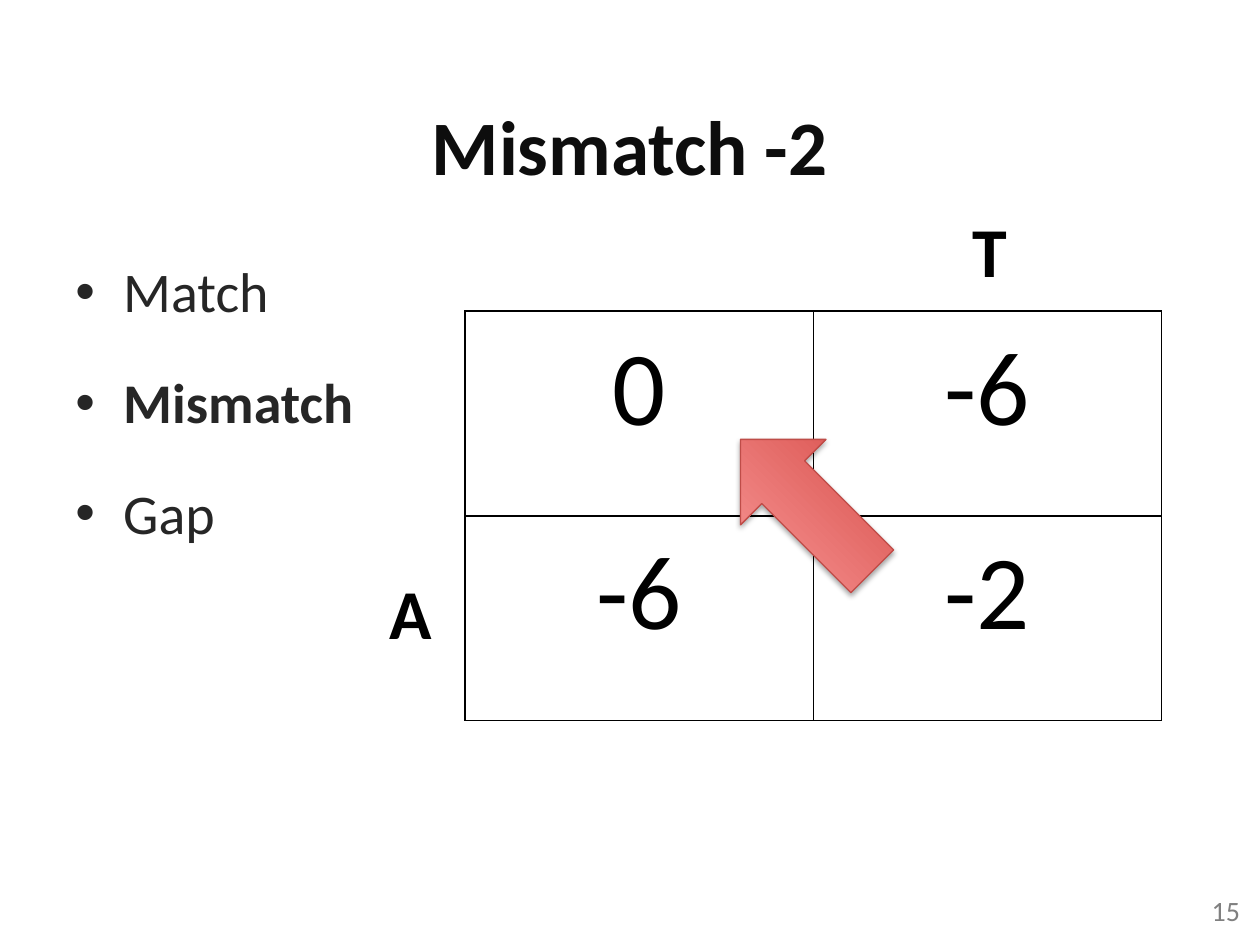
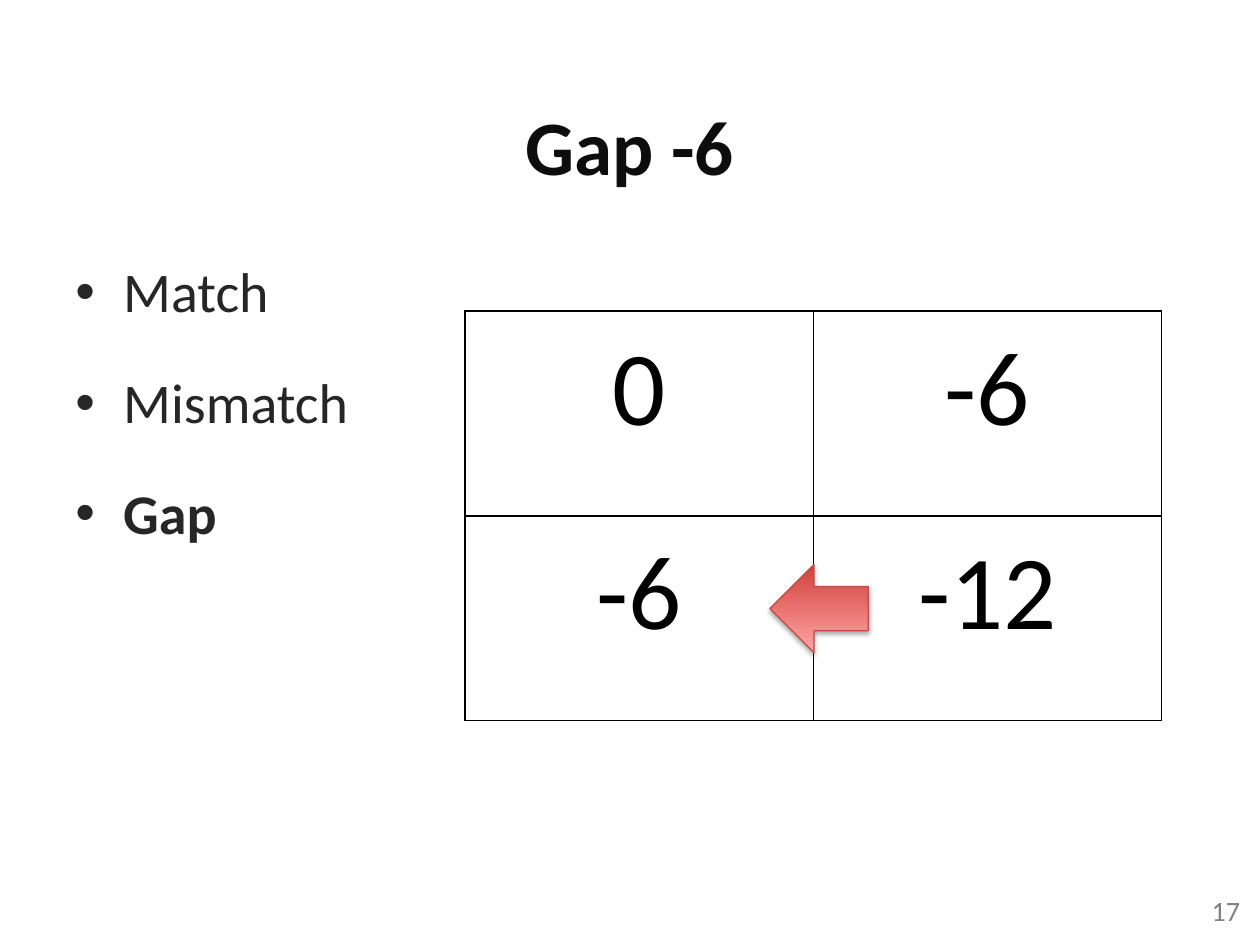
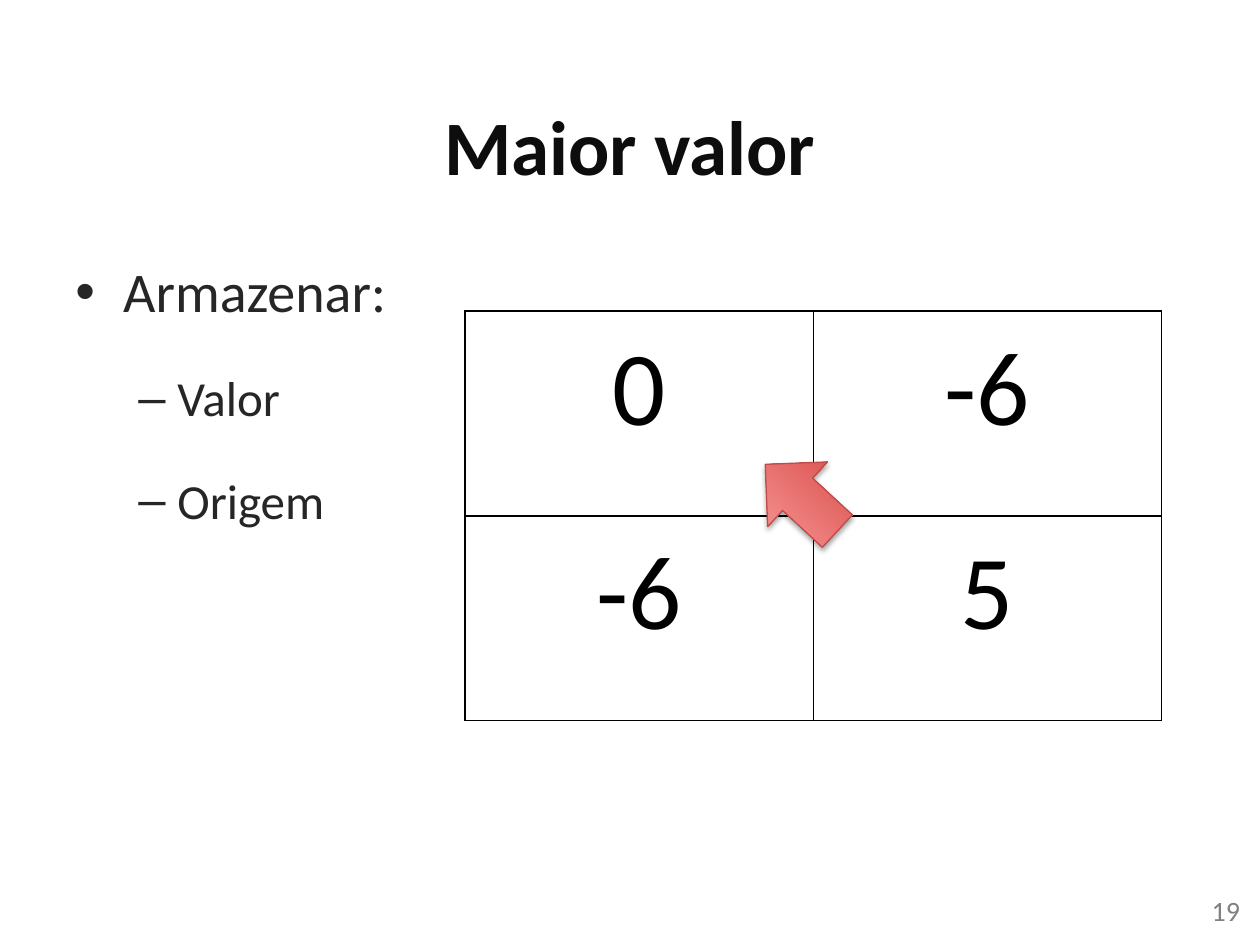
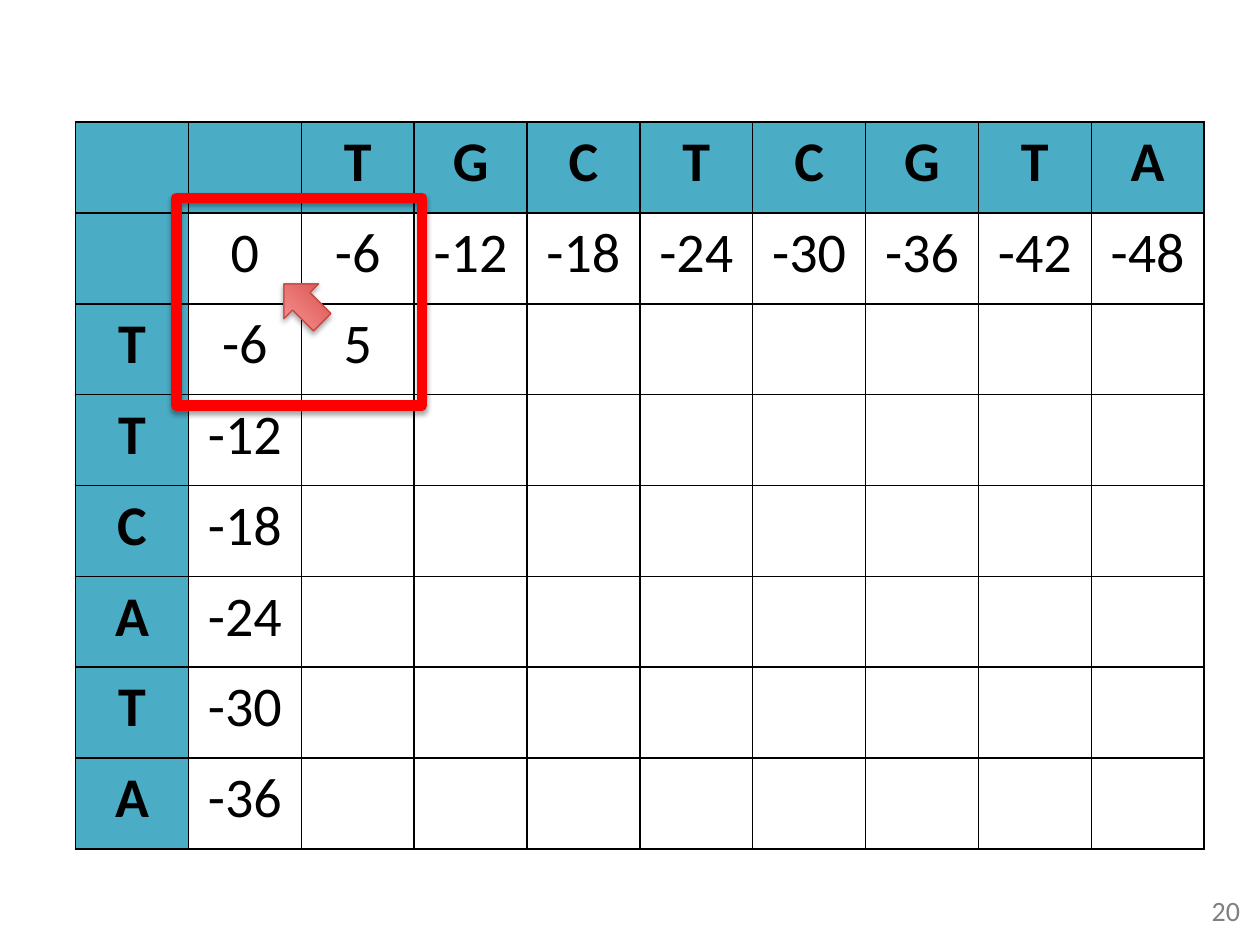
"""Build four slides on scoring a sequence alignment matrix."""
from lxml import etree
from pptx import Presentation
from pptx.dml.color import RGBColor
from pptx.enum import shapes, text
from pptx.oxml import ns
from pptx.util import Emu, Inches, Pt

FONT = "Calibri"
BLACK = RGBColor(0x00, 0x00, 0x00)
TITLE_COLOR = RGBColor(0x0D, 0x0D, 0x0D)
BODY_COLOR = RGBColor(0x26, 0x26, 0x26)
NUMBER_COLOR = RGBColor(0x80, 0x80, 0x80)
HEADER_FILL = RGBColor(0x4B, 0xAC, 0xC6)
ARROW_DARK = RGBColor(0xD1, 0x40, 0x3C)
ARROW_LIGHT = RGBColor(0xFF, 0xA6, 0xA5)
ARROW_LINE = RGBColor(0xBF, 0x4C, 0x48)
FRAME_RED = RGBColor(0xFF, 0x00, 0x00)

BULLET_LEVELS = [("•", 0.38, -0.38, 32), ("–", 0.81, -0.31, 28)]
SCORING_RULES = ["Match", "Mismatch", "Gap"]
TITLE_ONLY, BLANK = 5, 6
GAP = -6


def add_xml(parent, tag, **attributes):
    """Append a DrawingML element and return it."""
    return etree.SubElement(parent, ns.qn(tag), attributes)


def format_paragraph(paragraph, size, color, bold=False, alignment=text.PP_ALIGN.LEFT):
    """Set the alignment of a paragraph and the font of its runs."""
    paragraph.alignment = alignment
    for run in paragraph.runs:
        run.font.name = FONT
        run.font.size = Pt(size)
        run.font.bold = bold
        run.font.color.rgb = color


def add_text(slide, box, content, size, color, bold=False,
             alignment=text.PP_ALIGN.LEFT, wrap=True):
    """Add a text box with one paragraph."""
    shape = slide.shapes.add_textbox(*map(Inches, box))
    shape.text_frame.word_wrap = wrap
    shape.text_frame.text = content
    format_paragraph(shape.text_frame.paragraphs[0], size, color, bold, alignment)


def add_slide(presentation, number, title=None):
    """Add a numbered slide, with a title if one is given."""
    layout = presentation.slide_layouts[TITLE_ONLY if title else BLANK]
    slide = presentation.slides.add_slide(layout)
    if title:
        shape = slide.shapes.title
        shape.left, shape.top, shape.width, shape.height = map(Inches, (0.5, 0.52, 9, 1.25))
        shape.text_frame.text = title
        shape.text_frame.vertical_anchor = text.MSO_ANCHOR.MIDDLE
        format_paragraph(shape.text_frame.paragraphs[0], 44, TITLE_COLOR, True,
                         text.PP_ALIGN.CENTER)
    add_text(slide, (7.61, 7.04, 2.33, 0.4), str(number), 16, NUMBER_COLOR,
             alignment=text.PP_ALIGN.RIGHT)
    return slide


def add_bullets(slide, items, bold_item=None):
    """Add a bulleted list from pairs of text and level."""
    frame = slide.shapes.add_textbox(*map(Inches, (0.5, 1.99, 9, 4.95))).text_frame
    frame.word_wrap = True
    for index, (content, level) in enumerate(items):
        paragraph = frame.add_paragraph() if index else frame.paragraphs[0]
        paragraph.text = content
        character, margin, indent, size = BULLET_LEVELS[level]
        properties = paragraph._p.get_or_add_pPr()
        properties.set("marL", str(Inches(margin)))
        properties.set("indent", str(Inches(indent)))
        add_xml(properties, "a:buFont", typeface="Arial")
        add_xml(properties, "a:buChar", char=character)
        paragraph.level = level
        if index:
            paragraph.space_before = Pt(25)
        format_paragraph(paragraph, size, BODY_COLOR, content == bold_item)


def add_borders(cell):
    """Draw a thin black line on each side of a cell."""
    properties = cell._tc.get_or_add_tcPr()
    for position, side in enumerate(("a:lnL", "a:lnR", "a:lnT", "a:lnB")):
        line = etree.Element(ns.qn(side), w=str(Pt(1)))
        add_xml(add_xml(line, "a:solidFill"), "a:srgbClr", val=str(BLACK))
        properties.insert(position, line)


def add_grid(slide, box, rows, size, margins=(0.1, 0.05), headers=False):
    """Add a table of equal cells, with a coloured first row and column if asked."""
    left, top, width, height = map(Inches, box)
    table = slide.shapes.add_table(len(rows), len(rows[0]), left, top, width, height).table
    table.first_row = table.horz_banding = False
    for row in table.rows:
        row.height = Emu(height // len(rows))
    for column in table.columns:
        column.width = Emu(width // len(rows[0]))
    for row_index, values in enumerate(rows):
        for column_index, value in enumerate(values):
            cell = table.cell(row_index, column_index)
            is_header = headers and 0 in (row_index, column_index)
            cell.margin_left = cell.margin_right = Inches(margins[0])
            cell.margin_top = cell.margin_bottom = Inches(margins[1])
            cell.text = str(value)
            format_paragraph(cell.text_frame.paragraphs[0], size, BLACK, is_header,
                             text.PP_ALIGN.CENTER)
            if is_header:
                cell.fill.solid()
                cell.fill.fore_color.rgb = HEADER_FILL
            else:
                cell.fill.background()
            add_borders(cell)


def add_shadow(shape):
    """Give a shape a soft shadow below it."""
    shape.shadow.inherit = False
    effects = shape._element.spPr.find(ns.qn("a:effectLst"))
    shadow = add_xml(effects, "a:outerShdw", blurRad=str(Pt(3.1)), dist=str(Pt(1.8)),
                     dir="5400000", rotWithShape="0")
    add_xml(add_xml(shadow, "a:srgbClr", val=str(BLACK)), "a:alpha", val="35000")


def add_arrow(slide, box, rotation):
    """Add a red gradient arrow pointing to the cell a score comes from."""
    arrow = slide.shapes.add_shape(shapes.MSO_SHAPE.RIGHT_ARROW, *map(Inches, box))
    arrow.rotation = rotation
    arrow.fill.gradient()
    arrow.fill.gradient_angle = 90
    for stop, color, position in zip(arrow.fill.gradient_stops,
                                     (ARROW_DARK, ARROW_LIGHT), (0, 1)):
        stop.color.rgb = color
        stop.position = position
    arrow.line.color.rgb = ARROW_LINE
    arrow.line.width = Pt(0.75)
    add_shadow(arrow)


def add_frame(slide, box):
    """Add a thick red outline around some cells."""
    frame = slide.shapes.add_shape(shapes.MSO_SHAPE.RECTANGLE, *map(Inches, box))
    frame.fill.background()
    frame.line.color.rgb = FRAME_RED
    frame.line.width = Pt(6)
    add_shadow(frame)


def add_score_slide(presentation, number, title, items, score, arrow_box, rotation,
                    bold_item=None):
    """Add a slide that shows how one cell gets its score."""
    slide = add_slide(presentation, number, title)
    add_bullets(slide, items, bold_item)
    add_grid(slide, (3.69, 2.47, 5.53, 3.25), [[0, GAP], [GAP, score]], 60, (0.23, 0.11))
    add_arrow(slide, arrow_box, rotation)
    return slide


def add_matrix_slide(presentation, number, across, down):
    """Add the whole matrix with its first score filled in."""
    slide = add_slide(presentation, number)
    rows = [["", "", *across], ["", *(GAP * step for step in range(len(across) + 1))]]
    for step, letter in enumerate(down, 1):
        rows.append([letter, GAP * step] + [""] * len(across))
    rows[2][2] = 5
    add_grid(slide, (0.6, 0.97, 8.96, 5.77), rows, 32, headers=True)
    add_frame(slide, (1.4, 1.57, 1.95, 1.65))
    add_arrow(slide, (2.19, 2.21, 0.43, 0.39), 225)


def main():
    """Build the presentation and save it."""
    presentation = Presentation()
    presentation.slide_width, presentation.slide_height = Inches(10), Inches(7.5)
    rules = [(rule, 0) for rule in SCORING_RULES]

    mismatch = add_score_slide(presentation, 15, "Mismatch -2", rules, -2,
                               (5.66, 3.53, 1.48, 0.96), 225, "Mismatch")
    add_text(mismatch, (7.62, 1.6, 0.48, 0.77), "T", 40, BLACK, True, wrap=False)
    add_text(mismatch, (2.99, 4.47, 0.54, 0.77), "A", 40, BLACK, True, wrap=False)

    add_score_slide(presentation, 17, "Gap -6", rules, -12,
                    (6.11, 4.48, 0.78, 0.7), 180, "Gap")
    add_score_slide(presentation, 19, "Maior valor",
                    [("Armazenar:", 0), ("Valor", 1), ("Origem", 1)], 5,
                    (5.97, 3.6, 0.78, 0.7), 222.8)
    add_matrix_slide(presentation, 20, "TGCTCGTA", "TTCATA")
    presentation.save("out.pptx")


if __name__ == "__main__":
    main()
